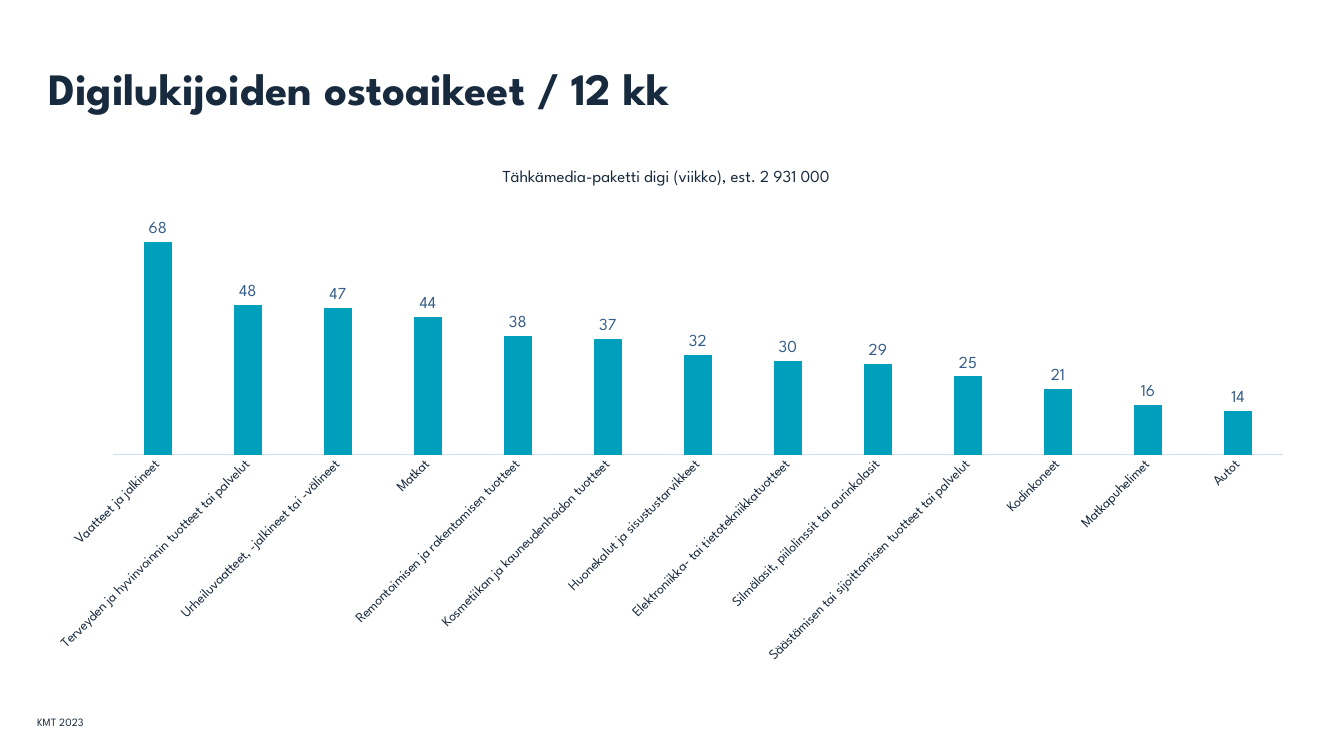
from lxml import etree
from pptx import Presentation
from pptx.chart.data import CategoryChartData as ChartData
from pptx.dml.color import RGBColor
from pptx.enum.chart import XL_CHART_TYPE as Kind, XL_LABEL_POSITION as Spot
from pptx.enum.chart import XL_TICK_MARK as Tick
from pptx.enum.text import MSO_ANCHOR as Anchor, PP_ALIGN as Align
from pptx.util import Inches, Pt

FACE = "League Spartan"
INK, TEAL, BLUE, PALE = "182A3D", "00A0BD", "365E89", "D1DFED"
HEAD = "Digilukijoiden ostoaikeet / 12 kk"
GROUP = "Tähkämedia-paketti digi (viikko), est. 2\u00a0931 000"
NOTE = "KMT 2023"
PLANS = [
    ("Vaatteet ja jalkineet", 68),
    ("Terveyden ja hyvinvoinnin tuotteet tai palvelut", 48),
    ("Urheiluvaatteet, -jalkineet tai -välineet", 47),
    ("Matkat", 44),
    ("Remontoimisen ja rakentamisen tuotteet", 38),
    ("Kosmetiikan ja kauneudenhoidon tuotteet", 37),
    ("Huonekalut ja sisustustarvikkeet", 32),
    ("Elektroniikka- tai tietotekniikkatuotteet", 30),
    ("Silmälasit, piilolinssit tai aurinkolasit", 29),
    ("Säästämisen tai sijoittamisen tuotteet tai palvelut", 25),
    ("Kodinkoneet", 21),
    ("Matkapuhelimet", 16),
    ("Autot", 14),
]
WIDE, HIGH = 13.33, 7.5
HEAD_BOX = (0.48, 0.5, 12.36, 0.81)
PLOT_BOX = (0.37, 1.48, 12.48, 5.51)
NOTE_BOX = (0.27, 6.96, 1.05, 0.4)
INNER = {"x": 0.06, "y": 0.1, "w": 0.93, "h": 0.45}  # shares of the chart


def tint(code):
    return RGBColor.from_string(code)


def style(font, size, color=INK, bold=False):
    font.name, font.size, font.bold = FACE, Pt(size), bold
    font.color.rgb = tint(color)


def place(shape, box):
    shape.left, shape.top, shape.width, shape.height = map(Inches, box)


def fix_plot(chart):
    """Pin the inner plot area to its shares of the chart."""
    area = chart.element.xpath("c:chart/c:plotArea")[0]
    for old in area.xpath("c:layout"):
        area.remove(old)
    space = area.nsmap["c"]
    layout = etree.Element(f"{{{space}}}layout")
    manual = etree.SubElement(layout, f"{{{space}}}manualLayout")
    rules = {"layoutTarget": "inner", "xMode": "edge", "yMode": "edge", **INNER}
    for tag, val in rules.items():
        etree.SubElement(manual, f"{{{space}}}{tag}").set("val", str(val))
    area.insert(0, layout)


def add_bars(slide):
    data = ChartData()
    data.categories = [name for name, _ in PLANS]
    data.add_series(GROUP, [share for _, share in PLANS])
    chart = slide.shapes.add_chart(
        Kind.COLUMN_CLUSTERED, *map(Inches, PLOT_BOX), data).chart
    style(chart.font, 10)
    chart.has_legend = False
    chart.has_title = True
    title = chart.chart_title.text_frame
    title.text = GROUP
    style(title.paragraphs[0].runs[0].font, 12)
    fix_plot(chart)

    names = chart.category_axis
    names.major_tick_mark = names.minor_tick_mark = Tick.NONE
    names.format.line.color.rgb = tint(PALE)
    names.format.line.width = Pt(0.75)
    style(names.tick_labels.font, 10)
    turn = names._element.xpath("c:txPr/a:bodyPr")[0]
    turn.set("rot", str(-45 * 60000))
    turn.set("vert", "horz")

    scale = chart.value_axis
    scale.minimum_scale, scale.maximum_scale = 0, 80
    scale.has_major_gridlines = False
    scale.visible = False

    plot = chart.plots[0]
    plot.gap_width, plot.overlap = 219, -27
    plot.vary_by_categories = False
    fill = plot.series[0].format.fill
    fill.solid()
    fill.fore_color.rgb = tint(TEAL)
    plot.has_data_labels = True
    labels = plot.data_labels
    labels.show_value = True
    labels.position = Spot.OUTSIDE_END
    style(labels.font, 12, BLUE)


def main():
    deck = Presentation()
    deck.slide_width, deck.slide_height = Inches(WIDE), Inches(HIGH)
    slide = deck.slides.add_slide(deck.slide_layouts[5])

    head = slide.shapes.title
    place(head, HEAD_BOX)
    frame = head.text_frame
    frame.text = HEAD
    frame.vertical_anchor = Anchor.MIDDLE
    frame.margin_left = frame.margin_right = 0
    frame.margin_top = frame.margin_bottom = 0
    line = frame.paragraphs[0]
    line.alignment = Align.LEFT
    line.line_spacing = 0.9
    style(line.runs[0].font, 32, bold=True)

    add_bars(slide)

    note = slide.shapes.add_textbox(*map(Inches, NOTE_BOX)).text_frame
    note.word_wrap = True
    note.vertical_anchor = Anchor.MIDDLE
    note.text = NOTE
    style(note.paragraphs[0].runs[0].font, 8)

    deck.save("out.pptx")


if __name__ == "__main__":
    main()
